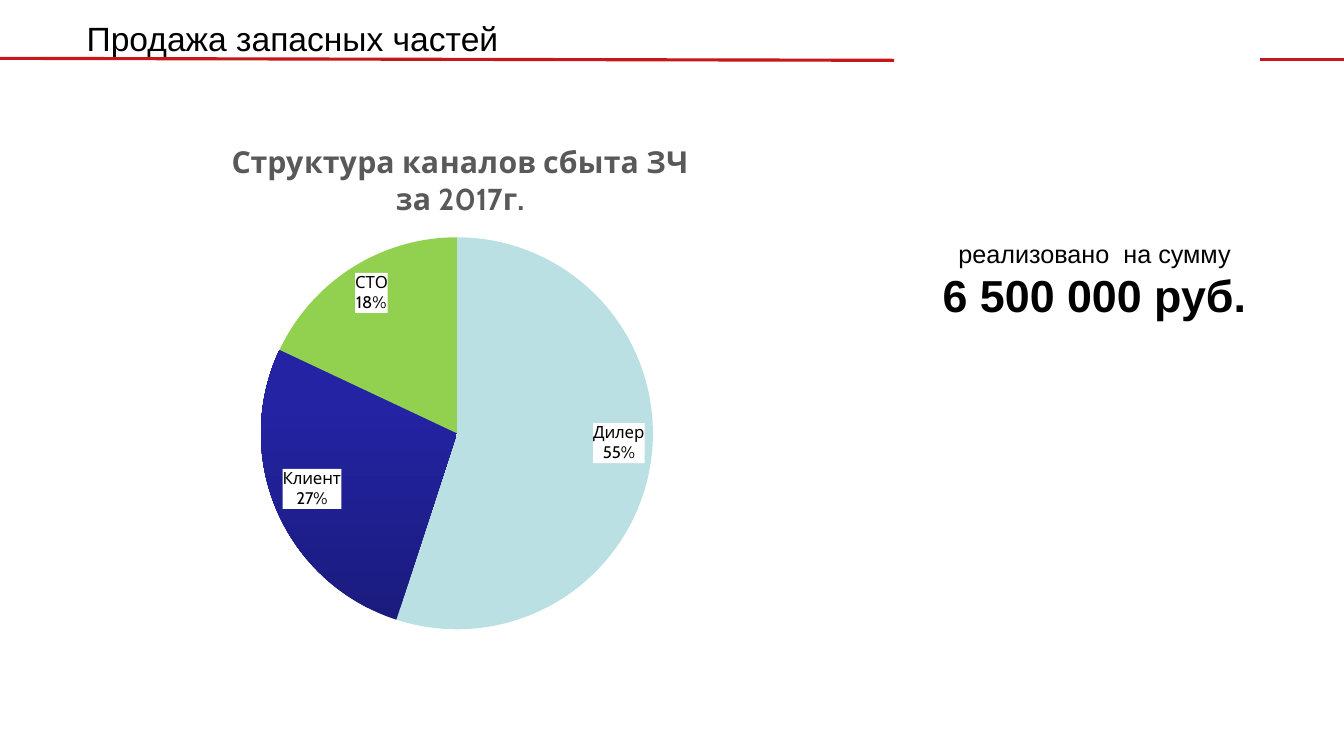
from lxml import etree
from pptx import Presentation
from pptx.chart.data import CategoryChartData
from pptx.dml.color import RGBColor
from pptx.enum.chart import XL_CHART_TYPE, XL_LABEL_POSITION
from pptx.enum.shapes import MSO_CONNECTOR
from pptx.enum.text import MSO_ANCHOR, PP_ALIGN
from pptx.oxml import parse_xml
from pptx.oxml.ns import nsdecls, qn
from pptx.util import Cm, Pt

PIE = XL_CHART_TYPE.PIE
INSIDE_END = XL_LABEL_POSITION.INSIDE_END
STRAIGHT = MSO_CONNECTOR.STRAIGHT
TOP = MSO_ANCHOR.TOP
LEFT, CENTER = PP_ALIGN.LEFT, PP_ALIGN.CENTER

BLACK = RGBColor(0x00, 0x00, 0x00)
GREY = RGBColor(0x59, 0x59, 0x59)
RED = RGBColor(0xC6, 0x17, 0x1B)
PALE_BLUE = RGBColor(0xBB, 0xE0, 0xE3)
NAVY = RGBColor(0x1B, 0x1B, 0x7E)
BLUE = RGBColor(0x23, 0x23, 0xA3)
GREEN = RGBColor(0x92, 0xD0, 0x50)

TEXT_FONT, CHART_FONT = "Arial", "Cabin"

TITLE = "Продажа запасных частей"
CHART_TITLE = ["Структура каналов сбыта ЗЧ", "за 2017г."]
CHANNELS = [("Дилер", 55, PALE_BLUE), ("Клиент", 27, (NAVY, BLUE)), ("СТО", 18, GREEN)]
SALES = [("реализовано  на сумму", 18, False), ("6 500 000 руб.", 32, True)]
RULES = [(0, 1.47, 22.53, 1.52), (31.75, 1.5, 33.87, 1.5)]  # x1, y1, x2, y2 in cm


def add_run(p, text, font, size, color, bold=False):
    r = p.add_run()
    r.text = text
    r.font.name = font
    r.font.size = Pt(size)
    r.font.bold = bold
    r.font.color.rgb = color


def set_layout(element, before, **fractions):
    """Place a chart part by fractions of the chart's size."""
    for old in element.findall(qn("c:layout")):
        element.remove(old)
    inner = '<c:layoutTarget val="inner"/>' if "w" in fractions else ""
    modes = "".join(f'<c:{k}Mode val="edge"/>' for k in "xy")
    values = "".join(f'<c:{k} val="{v}"/>' for k, v in fractions.items())
    layout = parse_xml(
        f'<c:layout {nsdecls("c")}><c:manualLayout>{inner}{modes}{values}'
        "</c:manualLayout></c:layout>")
    element.find(qn(before)).addprevious(layout)


prs = Presentation()
prs.slide_width, prs.slide_height = Cm(33.87), Cm(19.05)
s = prs.slides.add_slide(prs.slide_layouts[5])

# Heading and red rules
title = s.shapes.title
title.left, title.top, title.width, title.height = Cm(1.93), Cm(0.33), Cm(11), Cm(1.27)
tf = title.text_frame
tf.word_wrap = False
tf.vertical_anchor = TOP
tf.paragraphs[0].alignment = LEFT
add_run(tf.paragraphs[0], TITLE, TEXT_FONT, 24, BLACK)

for ends in RULES:
    rule = s.shapes.add_connector(STRAIGHT, *map(Cm, ends))
    rule.line.color.rgb = RED
    rule.line.width = Pt(2.25)
    etree.SubElement(rule.element.spPr, qn("a:effectLst"))

# Pie chart
data = CategoryChartData()
data.categories = [name for name, _, _ in CHANNELS]
data.add_series("Series 1", [share for _, share, _ in CHANNELS])
chart = s.shapes.add_chart(PIE, Cm(1.32), Cm(3.12), Cm(20.19), Cm(13), data).chart
chart.has_legend = False
chart.font.name = CHART_FONT
chart.font.size = Pt(10)
chart.font.color.rgb = BLACK

tf = chart.chart_title.text_frame
for i, line in enumerate(CHART_TITLE):
    p = tf.add_paragraph() if i else tf.paragraphs[0]
    p.alignment = CENTER
    add_run(p, line, CHART_FONT, 21.6, GREY, True)
chart_xml = chart.element.chart
set_layout(chart_xml.find(qn("c:title")), "c:overlay", x=0.22, y=0.03)
set_layout(chart_xml.plotArea, "c:pieChart", x=0.26, y=0.22, w=0.49, h=0.76)

plot = chart.plots[0]
plot.vary_by_categories = True
for i, (_, _, color) in enumerate(CHANNELS):
    fill = plot.series[0].points[i].format.fill
    if isinstance(color, RGBColor):
        fill.solid()
        fill.fore_color.rgb = color
    else:
        fill.gradient()
        fill.gradient_angle = 90
        for stop, position, shade in zip(fill.gradient_stops, (0, 0.8), color):
            stop.position = position
            stop.color.rgb = shade

labels = plot.series[0].data_labels
labels.show_value = False
labels.show_percentage = True
labels.show_category_name = True
labels.number_format = "0%"
labels.number_format_is_linked = False
labels.position = INSIDE_END
labels.font.name = CHART_FONT
labels.font.size = Pt(12)
labels.font.color.rgb = BLACK
label_box = parse_xml(
    f'<c:spPr {nsdecls("c", "a")}><a:solidFill><a:srgbClr val="FFFFFF"/>'
    "</a:solidFill></c:spPr>")
plot.series[0]._element.find(qn("c:dLbls")).find(qn("c:numFmt")).addnext(label_box)

# Sales total
tf = s.shapes.add_textbox(Cm(23.47), Cm(5.87), Cm(8.23), Cm(2.44)).text_frame
tf.word_wrap = False
for i, (line, size, bold) in enumerate(SALES):
    p = tf.add_paragraph() if i else tf.paragraphs[0]
    p.alignment = CENTER
    add_run(p, line, TEXT_FONT, size, BLACK, bold)

prs.save("out.pptx")
